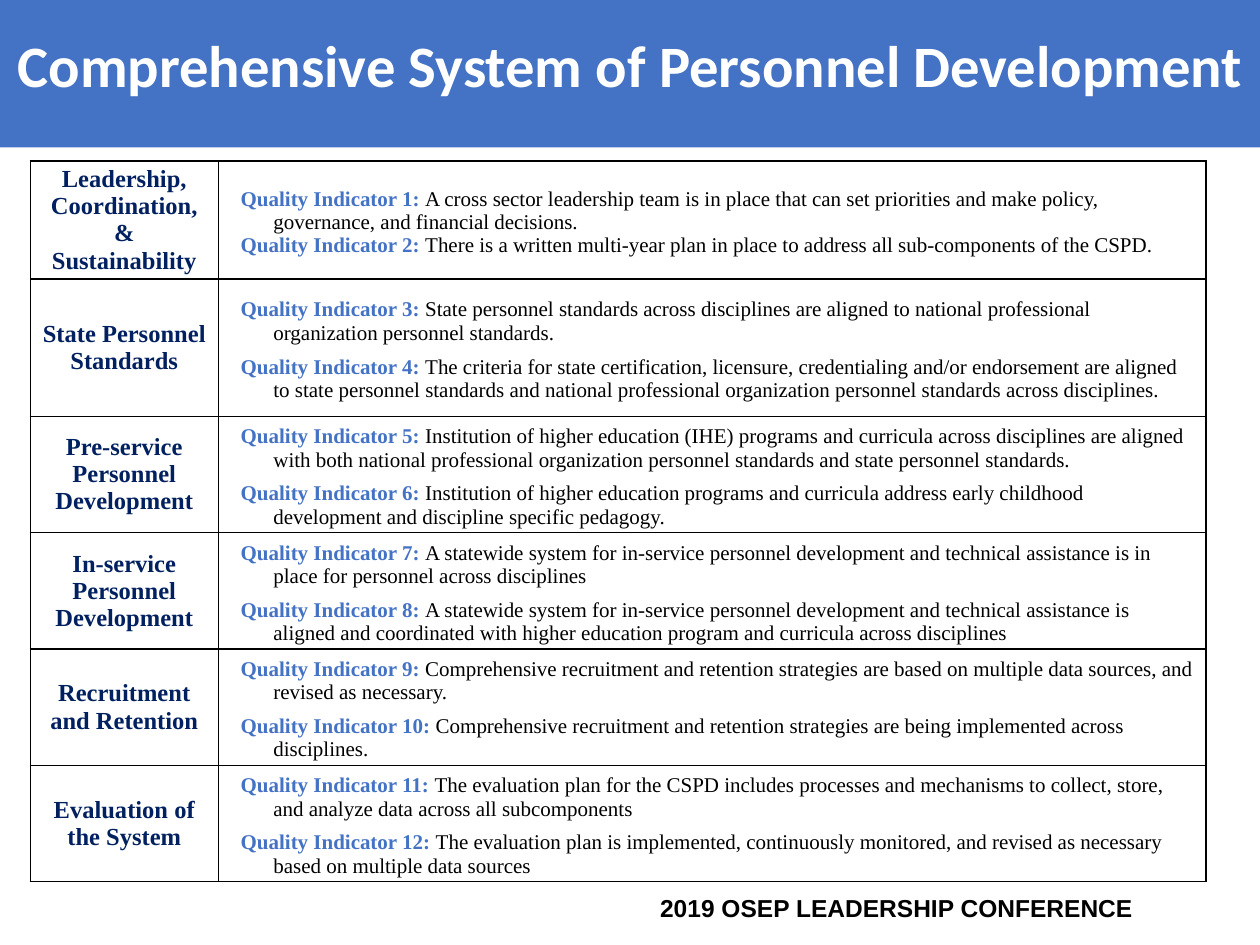
from lxml.etree import SubElement
from pptx import Presentation
from pptx.dml.color import RGBColor
from pptx.enum.text import MSO_ANCHOR, MSO_AUTO_SIZE, PP_ALIGN
from pptx.oxml.ns import qn
from pptx.util import Cm, Pt

BLUE = RGBColor(0x44, 0x72, 0xC4)
NAVY = RGBColor(0x00, 0x20, 0x60)
BLACK = RGBColor(0x00, 0x00, 0x00)
WHITE = RGBColor(0xFF, 0xFF, 0xFF)
SERIF = "Times New Roman"

TITLE = "Comprehensive System of Personnel Development"
FOOTER = "2019 OSEP LEADERSHIP CONFERENCE"
COLUMN_SHARES = (0.16, 0.84)
ROW_HEIGHTS = (2.31, 2.77, 2.34, 2.34, 2.31, 2.31)
COMPONENTS = [
    ("Leadership, Coordination, & Sustainability", [
        "A cross sector leadership team is in place that can set priorities and make policy, governance, and financial decisions.",
        "There is a written multi-year plan in place to address all sub-components of the CSPD.",
    ]),
    ("State Personnel Standards", [
        "State personnel standards across disciplines are aligned to national professional organization personnel standards.",
        "The criteria for state certification, licensure, credentialing and/or endorsement are aligned to state personnel standards and national professional organization personnel standards across disciplines.",
    ]),
    ("Pre-service Personnel Development", [
        "Institution of higher education (IHE) programs and curricula across disciplines are aligned with both national professional organization personnel standards and state personnel standards.",
        "Institution of higher education programs and curricula address early childhood development and discipline specific pedagogy.",
    ]),
    ("In-service Personnel Development", [
        "A statewide system for in-service personnel development and technical assistance is in place for personnel across disciplines",
        "A statewide system for in-service personnel development and technical assistance is aligned and coordinated with higher education program and curricula across disciplines",
    ]),
    ("Recruitment and Retention", [
        "Comprehensive recruitment and retention strategies are based on multiple data sources, and revised as necessary.",
        "Comprehensive recruitment and retention strategies are being implemented across disciplines.",
    ]),
    ("Evaluation of the System", [
        "The evaluation plan for the CSPD includes processes and mechanisms to collect, store, and analyze data across all subcomponents",
        "The evaluation plan is implemented, continuously monitored, and revised as necessary based on multiple data sources",
    ]),
]


def set_font(font, name, size, color, bold):
    font.name = name
    font.size = Pt(size)
    font.color.rgb = color
    font.bold = bold


def place_title(slide, left, top, width, height):
    title = slide.shapes.title
    title.left, title.top, title.width, title.height = left, top, width, height
    title.fill.solid()
    title.fill.fore_color.rgb = BLUE
    frame = title.text_frame
    frame.text = TITLE
    frame.word_wrap = True
    frame.auto_size = MSO_AUTO_SIZE.NONE
    frame.vertical_anchor = MSO_ANCHOR.MIDDLE
    frame.margin_left = frame.margin_right = Cm(0.1)
    paragraph = frame.paragraphs[0]
    paragraph.alignment = PP_ALIGN.CENTER
    paragraph.line_spacing = 0.9
    set_font(paragraph.font, "Calibri", 33.5, WHITE, True)


def format_cell(cell):
    cell.vertical_anchor = MSO_ANCHOR.MIDDLE
    cell.margin_left = cell.margin_right = Cm(0.17)
    cell.margin_top = cell.margin_bottom = 0
    properties = cell._tc.get_or_add_tcPr()
    for side in ("a:lnL", "a:lnR", "a:lnT", "a:lnB"):
        line = SubElement(properties, qn(side), w=str(Pt(1)))
        fill = SubElement(line, qn("a:solidFill"))
        SubElement(fill, qn("a:srgbClr"), val=str(BLACK))
    cell.fill.background()


def write_component(cell, name):
    format_cell(cell)
    cell.text = name
    paragraph = cell.text_frame.paragraphs[0]
    paragraph.alignment = PP_ALIGN.CENTER
    set_font(paragraph.font, SERIF, 14, NAVY, True)


def write_indicators(cell, indicators, first_number, gap):
    format_cell(cell)
    cell.margin_top = Cm(0.1)
    frame = cell.text_frame
    for index, wording in enumerate(indicators):
        paragraph = frame.add_paragraph() if index else frame.paragraphs[0]
        properties = paragraph._p.get_or_add_pPr()
        properties.set("marL", str(Cm(0.94)))
        properties.set("indent", str(Cm(-0.66)))
        paragraph.space_before = Pt(gap if index else 0)
        paragraph.space_after = Pt(gap)
        label = paragraph.add_run()
        label.text = f"Quality Indicator {first_number + index}: "
        set_font(label.font, SERIF, 12, BLUE, True)
        body = paragraph.add_run()
        body.text = wording
        set_font(body.font, SERIF, 12, BLACK, False)


def place_indicator_table(slide, left, top, width, height):
    table = slide.shapes.add_table(len(COMPONENTS), 2, left, top, width, height).table
    table.first_row = table.horz_banding = False
    for column, share in zip(table.columns, COLUMN_SHARES):
        column.width = int(width * share)
    number = 1
    for index, (name, indicators) in enumerate(COMPONENTS):
        table.rows[index].height = int(height * ROW_HEIGHTS[index] / sum(ROW_HEIGHTS))
        write_component(table.cell(index, 0), name)
        write_indicators(table.cell(index, 1), indicators, number, 3 if index else 0)
        number += len(indicators)


def place_footer(slide, left, top, width, height):
    frame = slide.shapes.add_textbox(left, top, width, height).text_frame
    frame.word_wrap = True
    frame.text = FOOTER
    paragraph = frame.paragraphs[0]
    paragraph.alignment = PP_ALIGN.RIGHT
    set_font(paragraph.font, "Arial", 14, BLACK, True)


def main():
    presentation = Presentation()
    presentation.slide_width = Cm(25.4)
    presentation.slide_height = Cm(19.05)
    slide = presentation.slides.add_slide(presentation.slide_layouts[5])
    place_footer(slide, Cm(8.43), Cm(17.88), Cm(14.66), Cm(0.86))
    place_title(slide, 0, Cm(-0.2), presentation.slide_width, Cm(3.17))
    place_indicator_table(slide, Cm(0.61), Cm(3.25), Cm(23.7), Cm(14.38))
    presentation.save("out.pptx")


if __name__ == "__main__":
    main()
